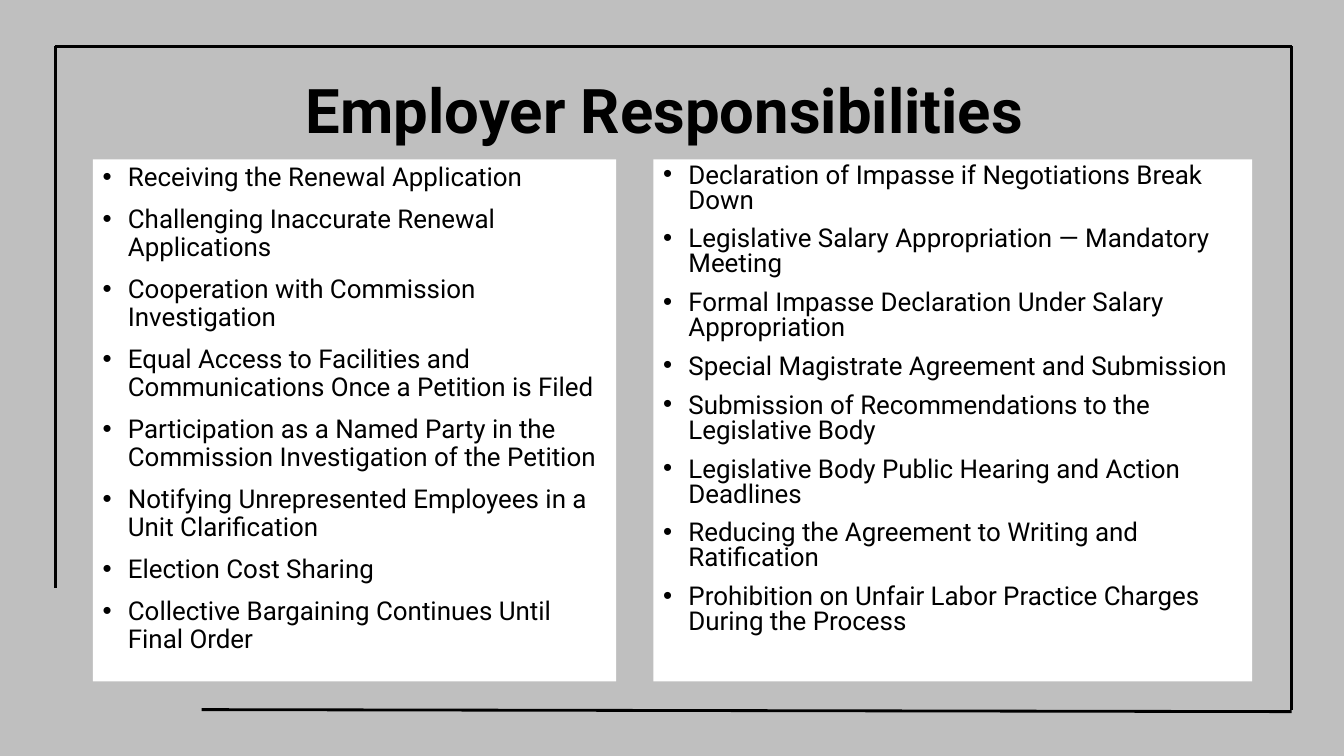
from dataclasses import dataclass

from lxml.etree import SubElement
from pptx import Presentation
from pptx.dml.color import RGBColor
from pptx.enum.shapes import MSO_CONNECTOR, MSO_SHAPE
from pptx.enum.text import MSO_ANCHOR, PP_ALIGN
from pptx.oxml.ns import qn
from pptx.util import Emu, Pt

EMU_PER_PX = 9144  # 100 px to the inch


def px(length):
    return Emu(length * EMU_PER_PX)


@dataclass(frozen=True)
class Theme:
    font: str = "Roboto"
    background: RGBColor = RGBColor(0xBF, 0xBF, 0xBF)
    panel: RGBColor = RGBColor(0xFF, 0xFF, 0xFF)
    ink: RGBColor = RGBColor(0x00, 0x00, 0x00)
    title_size: float = 44
    body_size: float = 18.5
    paragraph_gap: float = 10
    frame_width: float = 2
    bullet_indent: int = 25


def write_paragraph(paragraph, text, *, theme, size, bold=False,
                    align=PP_ALIGN.LEFT, line_spacing=0.9, space_before=0,
                    bullet=None):
    paragraph.alignment = align
    paragraph.line_spacing = line_spacing
    paragraph.space_before = Pt(space_before)
    if bullet:
        properties = paragraph._p.get_or_add_pPr()
        indent = px(theme.bullet_indent)
        properties.set("marL", str(indent))
        properties.set("indent", str(-indent))
        SubElement(properties, qn("a:buFont"), typeface="Arial")
        SubElement(properties, qn("a:buChar"), char=bullet)
    run = paragraph.add_run()
    run.text = text
    run.font.name = theme.font
    run.font.size = Pt(size)
    run.font.bold = bold
    run.font.color.rgb = theme.ink


class SlideBuilder:
    def __init__(self, slide, theme):
        self.slide = slide
        self.theme = theme
        slide.background.fill.solid()
        slide.background.fill.fore_color.rgb = theme.background

    def title(self, text, left, top, width, height):
        box = self.slide.shapes.add_textbox(px(left), px(top), px(width), px(height))
        frame = box.text_frame
        frame.word_wrap = True
        frame.vertical_anchor = MSO_ANCHOR.MIDDLE
        write_paragraph(frame.paragraphs[0], text, theme=self.theme,
                        size=self.theme.title_size, bold=True,
                        align=PP_ALIGN.CENTER)

    def bullet_panel(self, items, left, top, width, height, line_spacing):
        panel = self.slide.shapes.add_shape(
            MSO_SHAPE.RECTANGLE, px(left), px(top), px(width), px(height))
        panel.shadow.inherit = False
        panel.fill.solid()
        panel.fill.fore_color.rgb = self.theme.panel
        panel.line.fill.background()
        frame = panel.text_frame
        frame.word_wrap = True
        frame.vertical_anchor = MSO_ANCHOR.TOP
        for index, item in enumerate(items):
            paragraph = frame.add_paragraph() if index else frame.paragraphs[0]
            write_paragraph(paragraph, item, theme=self.theme,
                            size=self.theme.body_size, bullet="•",
                            line_spacing=line_spacing,
                            space_before=self.theme.paragraph_gap if index else 0)

    def line(self, start_x, start_y, end_x, end_y):
        connector = self.slide.shapes.add_connector(
            MSO_CONNECTOR.STRAIGHT, px(start_x), px(start_y), px(end_x), px(end_y))
        connector.line.color.rgb = self.theme.ink
        connector.line.width = Pt(self.theme.frame_width)
        SubElement(connector._element.spPr, qn("a:effectLst"))


PETITION_DUTIES = [
    "Receiving the Renewal Application",
    "Challenging Inaccurate Renewal Applications",
    "Cooperation with Commission Investigation",
    "Equal Access to Facilities and Communications Once a Petition is Filed",
    "Participation as a Named Party in the Commission Investigation of the Petition",
    "Notifying Unrepresented Employees in a Unit Clarification",
    "Election Cost Sharing",
    "Collective Bargaining Continues Until Final Order",
]
IMPASSE_DUTIES = [
    "Declaration of Impasse if Negotiations Break Down",
    "Legislative Salary Appropriation — Mandatory Meeting",
    "Formal Impasse Declaration Under Salary Appropriation",
    "Special Magistrate Agreement and Submission",
    "Submission of Recommendations to the Legislative Body",
    "Legislative Body Public Hearing and Action Deadlines",
    "Reducing the Agreement to Writing and Ratification",
    "Prohibition on Unfair Labor Practice Charges During the Process",
]


def main():
    presentation = Presentation()
    presentation.slide_width = px(1333)
    presentation.slide_height = px(750)
    slide = presentation.slides.add_slide(presentation.slide_layouts[6])
    builder = SlideBuilder(slide, Theme())

    # Left panel
    panel_top, panel_height = 158, 518
    builder.bullet_panel(PETITION_DUTIES, 92, panel_top, 519, panel_height, 0.9)

    # Open frame around the content
    frame_left, frame_top, frame_right, frame_bottom = 55, 46, 1281, 704
    builder.line(frame_left, frame_top, frame_left, 583)
    builder.line(frame_right, frame_top, frame_right, frame_bottom)
    builder.line(frame_right, frame_top, frame_left, frame_top)
    builder.line(frame_right, frame_bottom + 2, 200, frame_bottom)

    # Title
    builder.title("Employer Responsibilities ", 92, 40, 1150, 145)

    # Right panel
    builder.bullet_panel(IMPASSE_DUTIES, 648, panel_top, 594, panel_height, 0.8)

    presentation.save("out.pptx")


if __name__ == "__main__":
    main()
